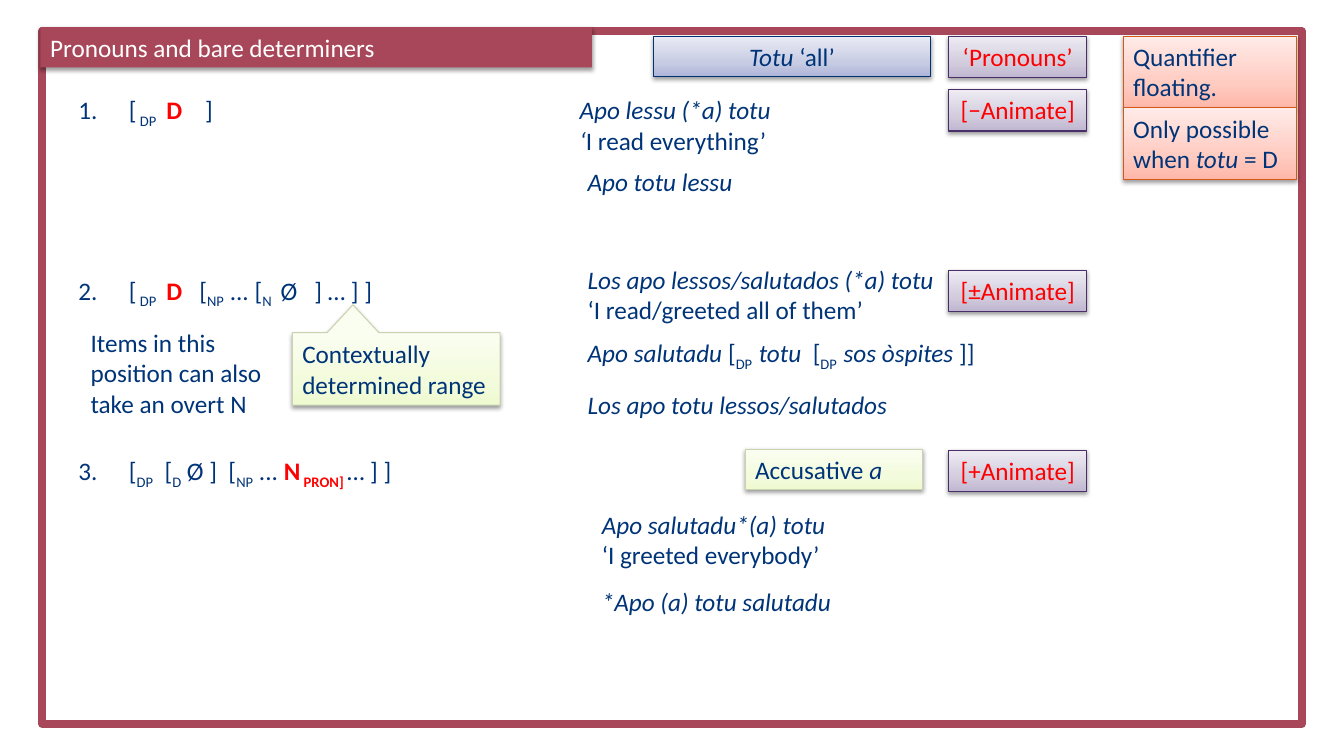
from lxml import etree
from pptx import Presentation
from pptx.dml.color import RGBColor
from pptx.enum.shapes import MSO_SHAPE as Shape
from pptx.enum.text import MSO_ANCHOR as Anchor
from pptx.enum.text import MSO_AUTO_SIZE as AutoSize
from pptx.enum.text import PP_ALIGN as Align
from pptx.oxml import parse_xml
from pptx.oxml.ns import nsdecls, qn
from pptx.util import Inches, Pt

COLORS = {"wine": "A8475A", "navy": "003478", "red": "FF0000", "white": "FFFFFF", "black": "000000"}
PANELS = {
    "green": {"stops": ("EEFAD0", "F3FBDD", "FAFEF1"), "line": "CAD3B0"},
    "purple": {"stops": ("BFB6D0", "D2CCDD", "EEEBF3"), "line": "492E69"},
    "blue": {"stops": ("AFB5D8", "C7CCE3", "EAEBF5"), "line": "003375"},
    "coral": {"stops": ("FFB7A9", "FFCCC2", "FFEBE8"), "line": "D55914"},
}
ROWS = [
    {
        "structure": [("1.\t[", ""), (" DP   ", "s"), ("D    ", "rb"), ("]", "")],
        "feature": "[−Animate]",
        "examples": [
            (4.97, 0, 3.67, 0.71, [("Apo lessu (*a) totu\n‘", "i"), ("I read everything’", "")]),
            (5.05, 0.71, 2.86, 0.4, [("Apo totu lessu", "i")]),
        ],
    },
    {
        "structure": [("2.\t[", ""), (" DP   ", "s"), ("D  ", "rb"), (" [", ""), ("NP", "s"),
                      (" ... [", ""), ("N ", "s"), (" Ø   ] … ] ]", "")],
        "feature": "[±Animate]",
        "examples": [
            (5.05, -0.11, 3.85, 0.71, [("Los apo lessos/salutados (*a) totu\n", "i"),
                                       ("‘I read/greeted all of them’", "")]),
            (5.05, 0.62, 5.88, 0.4, [("Apo salutadu ", "i"), ("[", ""), ("DP  ", "s"), ("totu  ", "i"),
                                     ("[", ""), ("DP  ", "s"), ("sos òspites ", "i"), ("]]", "")]),
            (5.05, 1.13, 3.79, 0.4, [("Los apo totu lessos/salutados", "i")]),
        ],
    },
    {
        "structure": [("3.\t[", ""), ("DP", "s"), ("  [", ""), ("D", "s"), (" Ø ]  [", ""), ("NP", "s"),
                      (" ... ", ""), ("N", "rb"), (" PRON] ", "rbs"), ("… ] ]", "")],
        "feature": "[+Animate]",
        "examples": [
            (5.19, 0.53, 3.99, 0.71, [("Apo salutadu*(a) totu\n", "i"), ("‘I greeted everybody’", "")]),
            (5.19, 1.3, 2.81, 0.41, [("*Apo (a) totu salutadu", "i")]),
        ],
    },
]


def write_text(shape, runs, color="navy", align=Align.LEFT, anchor=Anchor.TOP, auto_size=AutoSize.SHAPE_TO_FIT_TEXT):
    frame = shape.text_frame
    frame.word_wrap = True
    frame.auto_size = auto_size
    frame.vertical_anchor = anchor
    paragraph = frame.paragraphs[0]
    paragraph.alignment = align
    for text, style in runs:
        for index, line in enumerate(text.split("\n")):
            if index:
                paragraph.add_line_break()
            if not line:
                continue
            run = paragraph.add_run()
            run.text = line
            run.font.name = "Calibri"
            run.font.size = Pt(18)
            run.font.bold = "b" in style
            run.font.italic = "i" in style
            run.font.color.rgb = RGBColor.from_string(COLORS["red" if "r" in style else color])
            if "s" in style:
                run.font._element.set("baseline", "-25000")


def add_shadow(shape):
    shape.shadow.inherit = False
    effects = shape._element.spPr.find(qn("a:effectLst"))
    shadow = etree.SubElement(effects, qn("a:outerShdw"), blurRad="40000", dist="20000",
                              dir="5400000", rotWithShape="0")
    color = etree.SubElement(shadow, qn("a:srgbClr"), val=COLORS["black"])
    etree.SubElement(color, qn("a:alpha"), val="38000")


def add_label(slide, box, runs):
    label = slide.shapes.add_textbox(*map(Inches, box))
    write_text(label, runs)


def add_panel(slide, box, palette, runs, geometry=Shape.RECTANGLE, **text_options):
    panel = slide.shapes.add_shape(geometry, *map(Inches, box))
    look = PANELS[palette]
    stops = "".join(
        f'<a:gs pos="{position}"><a:srgbClr val="{color}"/></a:gs>'
        for position, color in zip((0, 35000, 100000), look["stops"])
    )
    gradient = parse_xml(
        f'<a:gradFill {nsdecls("a")} rotWithShape="1"><a:gsLst>{stops}</a:gsLst>'
        '<a:lin ang="16200000" scaled="0"/></a:gradFill>'
    )
    panel._element.spPr.find(qn("a:prstGeom")).addnext(gradient)
    panel.line.color.rgb = RGBColor.from_string(look["line"])
    panel.line.width = Pt(0.75)
    add_shadow(panel)
    write_text(panel, runs, **text_options)
    return panel


def add_frame(slide, left, top, width, height):
    border = slide.shapes.add_shape(Shape.RECTANGLE, *map(Inches, (left, top, width, height)))
    border.shadow.inherit = False
    border.fill.background()
    border.line.color.rgb = RGBColor.from_string(COLORS["wine"])
    border.line.width = Pt(5.67)
    title = slide.shapes.add_shape(Shape.RECTANGLE, *map(Inches, (left - 0.02, top - 0.04, 5.47, 0.4)))
    title.fill.solid()
    title.fill.fore_color.rgb = RGBColor.from_string(COLORS["wine"])
    title.line.fill.background()
    add_shadow(title)
    write_text(title, [("Pronouns and bare determiners", "")], color="white")


def add_headings(slide, left, top):
    add_panel(slide, (left, top, 2.75, 0.4), "blue", [("Totu ", "i"), ("‘all’", "")], align=Align.CENTER)
    add_panel(slide, (left + 2.93, top, 1.37, 0.41), "purple", [("‘Pronouns’", "r")], align=Align.CENTER)


def add_floating_notes(slide, left, top, width, height):
    notes = [
        [("Quantifier\nfloating.", "")],
        [("Only possible when ", ""), ("totu", "i"), (" = D", "")],
    ]
    for index, runs in enumerate(notes):
        add_panel(slide, (left, top + index * height, width, height), "coral", runs)


def add_row(slide, left, top, row):
    add_label(slide, (left, top, 4.11, 0.4), row["structure"])
    add_panel(slide, (left + 8.73, top, 1.37, 0.41), "purple", [(row["feature"], "r")], align=Align.CENTER)
    for across, down, width, height, runs in row["examples"]:
        add_label(slide, (left + across, top + down, width, height), runs)


def add_range_notes(slide, left, top):
    add_label(slide, (left, top, 1.97, 1.01), [("Items in this position can also take an overt N", "")])
    callout = add_panel(slide, (left + 2.1, top + 0.1, 2.06, 0.72), "green",
                        [("Contextually determined range", "")], Shape.RECTANGULAR_CALLOUT,
                        anchor=Anchor.MIDDLE, auto_size=AutoSize.NONE)
    callout.adjustments[0] = -0.208
    callout.adjustments[1] = -0.883


def main():
    presentation = Presentation()
    presentation.slide_width = Inches(13.33)
    presentation.slide_height = Inches(7.5)
    slide = presentation.slides.add_slide(presentation.slide_layouts[6])
    add_frame(slide, 0.42, 0.31, 12.49, 6.87)
    add_headings(slide, 6.48, 0.36)
    add_floating_notes(slide, 11.14, 0.36, 1.72, 0.71)
    for index, row in enumerate(ROWS):
        add_row(slide, 0.68, 0.89 + index * 1.79, row)
    add_range_notes(slide, 0.8, 3.2)
    add_panel(slide, (7.39, 4.46, 1.76, 0.4), "green", [("Accusative ", ""), ("a", "i")])
    presentation.save("out.pptx")


if __name__ == "__main__":
    main()
